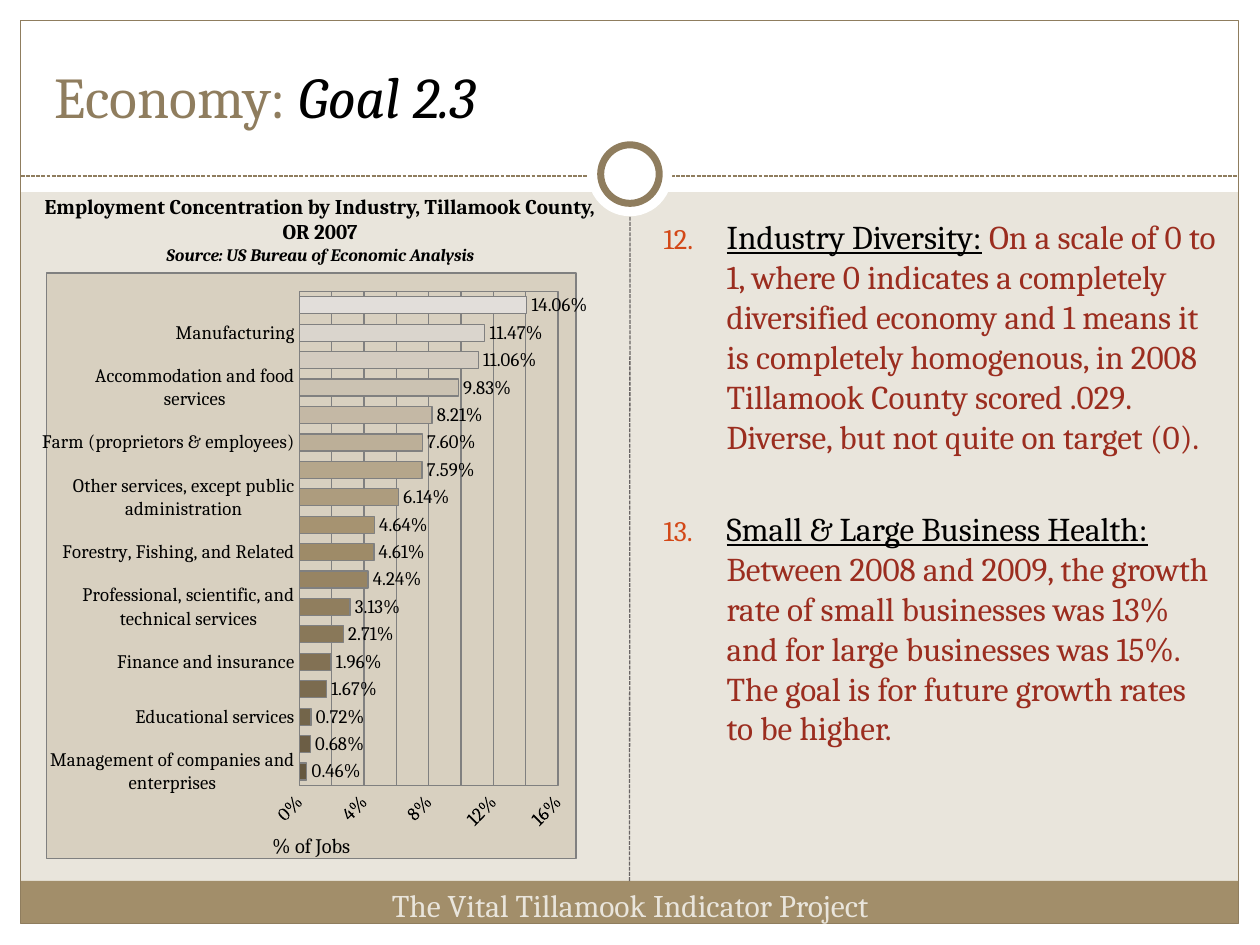
from dataclasses import dataclass

import lxml.etree
import pptx
import pptx.chart.data
import pptx.dml.color
import pptx.enum.chart
import pptx.enum.dml
import pptx.enum.shapes
import pptx.enum.text
import pptx.oxml
import pptx.oxml.ns
import pptx.util

Cm, Pt, qn = pptx.util.Cm, pptx.util.Pt, pptx.oxml.ns.qn
SHAPE = pptx.enum.shapes.MSO_SHAPE
ALIGN = pptx.enum.text.PP_ALIGN
FONT = "Cambria"
COLORS = {
    "white": "FFFFFF", "black": "000000", "paper": "E9E5DC", "tan": "A28E6A",
    "brown": "8F7D5E", "divider": "696464", "red": "9B2D1F", "number": "D34817",
    "chart": "D8D0C0", "grid": "808080", "bar_dark": "655840", "bar_light": "E2DEDA",
}
JOBS = [
    ("Management of companies and enterprises", 0.0046),
    ("Information", 0.0068),
    ("Educational services", 0.0072),
    ("Arts, entertainment, and recreation", 0.0167),
    ("Finance and insurance", 0.0196),
    ("Transportation and warehousing", 0.0271),
    ("Professional, scientific, and technical services", 0.0313),
    ("Administrative and waste services", 0.0424),
    ("Forestry, Fishing, and Related", 0.0461),
    ("Real estate and rental and leasing", 0.0464),
    ("Other services, except public administration", 0.0614),
    ("Construction", 0.0759),
    ("Farm (proprietors & employees)", 0.076),
    ("Health care and social assistance", 0.0821),
    ("Accommodation and food services", 0.0983),
    ("Retail trade", 0.1106),
    ("Manufacturing", 0.1147),
    ("Government and government enterprises", 0.1406),
]


@dataclass
class Panel:
    """A preset shape, measured in centimetres."""
    left: float
    top: float
    width: float
    height: float
    fill: str | None = "white"
    line: float = 0
    kind: SHAPE = SHAPE.RECTANGLE


@dataclass
class Words:
    """One run of text and its look."""
    text: str
    size: float
    color: str = "black"
    bold: bool = False
    italic: bool = False
    underline: bool = False


def rgb(name: str) -> pptx.dml.color.RGBColor:
    """Return a named colour."""
    return pptx.dml.color.RGBColor.from_string(COLORS[name])


def style_font(font, size: float, color: str = "black") -> None:
    """Set typeface, size and colour."""
    font.name, font.size = FONT, Pt(size)
    font.color.rgb = rgb(color)


def add_panel(slide, panel: Panel):
    """Draw a panel and return it."""
    shape = slide.shapes.add_shape(
        panel.kind, Cm(panel.left), Cm(panel.top), Cm(panel.width), Cm(panel.height))
    shape.shadow.inherit = False
    if panel.fill:
        shape.fill.solid()
        shape.fill.fore_color.rgb = rgb(panel.fill)
    else:
        shape.fill.background()
    if panel.line:
        shape.line.color.rgb = rgb("brown")
        shape.line.width = Pt(panel.line)
    else:
        shape.line.fill.background()
    return shape


def add_dashed_line(slide, start: tuple, end: tuple, color: str):
    """Draw a dashed straight connector."""
    line = slide.shapes.add_connector(
        pptx.enum.shapes.MSO_CONNECTOR.STRAIGHT, *map(Cm, start + end))
    line.line.color.rgb = rgb(color)
    line.line.width = Pt(0.75)
    line.line.dash_style = pptx.enum.dml.MSO_LINE.SQUARE_DOT
    lxml.etree.SubElement(line._element.spPr, qn("a:effectLst"))
    return line


def add_text(slide, box: tuple, paragraphs: list[list[Words]], align=ALIGN.LEFT):
    """Write paragraphs in a wrapping text box and return its frame."""
    frame = slide.shapes.add_textbox(*map(Cm, box)).text_frame
    frame.word_wrap = True
    for index, words in enumerate(paragraphs):
        paragraph = frame.add_paragraph() if index else frame.paragraphs[0]
        paragraph.alignment = align
        for item in words:
            run = paragraph.add_run()
            run.text = item.text
            style_font(run.font, item.size, item.color)
            run.font.bold, run.font.italic = item.bold, item.italic
            run.font.underline = item.underline
    return frame


def number_paragraph(paragraph, start: int) -> None:
    """Give a paragraph a hanging coloured number."""
    props = paragraph._p.get_or_add_pPr()
    props.set("marL", str(Cm(1.27)))
    props.set("indent", str(-Cm(1.27)))
    color = lxml.etree.SubElement(props, qn("a:buClr"))
    lxml.etree.SubElement(color, qn("a:srgbClr"), val=COLORS["number"])
    lxml.etree.SubElement(props, qn("a:buSzPct"), val="85000")
    lxml.etree.SubElement(props, qn("a:buAutoNum"), type="arabicPeriod", startAt=str(start))


def chart_layout(inner: bool, **place: float):
    """Build a manual chart layout from fractions of the chart."""
    layout = lxml.etree.Element(qn("c:layout"))
    manual = lxml.etree.SubElement(layout, qn("c:manualLayout"))
    if inner:
        lxml.etree.SubElement(manual, qn("c:layoutTarget"), val="inner")
    for axis in "xy":
        lxml.etree.SubElement(manual, qn(f"c:{axis}Mode"), val="edge")
    for side, value in place.items():
        lxml.etree.SubElement(manual, qn(f"c:{side}"), val=str(value))
    return layout


def area_format(fill: str):
    """Build the fill and border of a chart area."""
    return pptx.oxml.parse_xml(
        f'<c:spPr {pptx.oxml.ns.nsdecls("c", "a")}>'
        f'<a:solidFill><a:srgbClr val="{COLORS[fill]}"/></a:solidFill><a:ln w="9525">'
        f'<a:solidFill><a:srgbClr val="{COLORS["grid"]}"/></a:solidFill></a:ln></c:spPr>')


def bar_color(index: int) -> pptx.dml.color.RGBColor:
    """Blend from dark through tan to light along the bars."""
    middle = (len(JOBS) - 1) / 2
    first, last = ("bar_dark", "tan") if index < middle else ("tan", "bar_light")
    share = index / middle % 1 if index < 2 * middle else 1
    return pptx.dml.color.RGBColor(
        *(round(a + (b - a) * share) for a, b in zip(rgb(first), rgb(last))))


def add_jobs_chart(slide) -> None:
    """Draw the chart of jobs by industry."""
    data = pptx.chart.data.CategoryChartData(number_format="0.00%")
    data.categories = [name for name, _ in JOBS]
    data.add_series("Series 1", [share for _, share in JOBS])
    chart = slide.shapes.add_chart(
        pptx.enum.chart.XL_CHART_TYPE.BAR_CLUSTERED,
        Cm(0.85), Cm(5.49), Cm(11), Cm(11.95), data).chart
    chart.has_legend = chart.has_title = False
    style_font(chart.font, 10)
    bars = chart.plots[0]
    bars.gap_width, bars.vary_by_categories = 61, False
    for index in range(len(JOBS)):
        look = bars.series[0].points[index].format
        look.fill.solid()
        look.fill.fore_color.rgb = bar_color(index)
        look.line.color.rgb = rgb("grid")
        look.line.width = Pt(0.75)
    bars.has_data_labels = True
    labels = bars.data_labels
    labels.show_value = True
    labels.position = pptx.enum.chart.XL_LABEL_POSITION.OUTSIDE_END
    labels.number_format, labels.number_format_is_linked = "0.00%", False
    style_font(labels.font, 11)
    industry, share = chart.category_axis, chart.value_axis
    share.minimum_scale, share.maximum_scale, share.major_unit = 0, 0.16, 0.02
    share.has_major_gridlines = True
    share.tick_labels.number_format = "0%"
    share.tick_labels.number_format_is_linked = False
    for axis in (industry, share):
        axis.major_tick_mark = axis.minor_tick_mark = pptx.enum.chart.XL_TICK_MARK.NONE
        style_font(axis.tick_labels.font, 11)
    for line in (industry.format.line, share.format.line, share.major_gridlines.format.line):
        line.color.rgb = rgb("grid")
        line.width = Pt(0.75)
    caption = share.axis_title.text_frame.paragraphs[0].add_run()
    caption.text = "% of Jobs"
    style_font(caption.font, 12)
    caption.font.bold = False
    space = chart._chartSpace
    for layout in space.xpath(".//c:plotArea/c:layout | .//c:valAx/c:title/c:layout"):
        layout.getparent().remove(layout)
    plot_area = space.xpath(".//c:plotArea")[0]
    plot_area.insert(0, chart_layout(True, x=0.478, y=0.032, w=0.488, h=0.843))
    plot_area.append(area_format("chart"))
    space.xpath("./c:chart")[0].addnext(area_format("chart"))
    space.xpath(".//c:valAx/c:title/c:tx")[0].addnext(chart_layout(False, x=0.42, y=0.95))
    space.xpath(".//c:valAx/c:txPr/a:bodyPr")[0].set("rot", "-2700000")
    skip = lxml.etree.Element(qn("c:tickLblSkip"), val="2")
    space.xpath(".//c:catAx/c:noMultiLvlLbl")[0].addprevious(skip)


def main() -> None:
    """Build the economy slide."""
    deck = pptx.Presentation()
    deck.slide_width, deck.slide_height = Cm(25.4), Cm(19.05)
    slide = deck.slides.add_slide(deck.slide_layouts[6])
    slide.background.fill.solid()
    slide.background.fill.fore_color.rgb = rgb("paper")
    for margin in (Panel(0, 18.62, 25.4, 0.43), Panel(0, 0, 25.4, 3.87),
                   Panel(0, 0, 0.42, 19.05), Panel(24.98, 0, 0.42, 19.05)):
        add_panel(slide, margin)
    footer = add_panel(slide, Panel(0.42, 17.76, 24.54, 0.86, "tan"))
    add_panel(slide, Panel(0.42, 0.42, 24.55, 18.2, None, 0.75))
    add_dashed_line(slide, (0.42, 3.55), (24.97, 3.55), "brown")
    add_panel(slide, Panel(11.85, 2.66, 1.7, 1.7, kind=SHAPE.OVAL))
    add_panel(slide, Panel(12.11, 2.92, 1.18, 1.18, line=4, kind=SHAPE.OVAL))
    divider = add_dashed_line(slide, (12.69, 17.76), (12.7, 4.36), "divider")
    divider.begin_connect(footer, 0)
    title = add_text(slide, (0.85, 0.64, 23.7, 2.11), [
        [Words("Economy: ", 33, "brown"), Words("Goal 2.3", 33, italic=True)]])
    title.vertical_anchor = pptx.enum.text.MSO_ANCHOR.BOTTOM
    add_text(slide, (6.99, 17.73, 11.43, 1.02), [
        [Words("The Vital Tillamook Indicator Project", 18, "paper")]], ALIGN.CENTER)
    findings = add_text(slide, (13.13, 4.24, 11.63, 13.13), [
        [Words("Industry Diversity:", 19, underline=True), Words(" ", 19),
         Words("On a scale of 0 to 1, where 0 indicates a completely diversified economy and "
               "1 means it is completely homogenous, in 2008 Tillamook County scored .029. "
               "Diverse, but not quite on target (0).", 19, "red")],
        [Words("Small & Large Business Health:", 19, underline=True), Words(" ", 19),
         Words("Between 2008 and 2009, the growth rate of small businesses was 13% and for "
               "large businesses was 15%. The goal is for future growth rates to be higher.",
               19, "red")]])
    for paragraph, gap in zip(findings.paragraphs, (4, 30)):
        paragraph.space_before = Pt(gap)
        number_paragraph(paragraph, 12)
    add_jobs_chart(slide)
    add_text(slide, (0.42, 3.78, 12.07, 1.7), [
        [Words("Employment Concentration by Industry, Tillamook County, OR 2007", 12, bold=True)],
        [Words("Source: US Bureau of Economic Analysis", 10, bold=True, italic=True)]],
        ALIGN.CENTER)
    deck.save("out.pptx")


if __name__ == "__main__":
    main()
